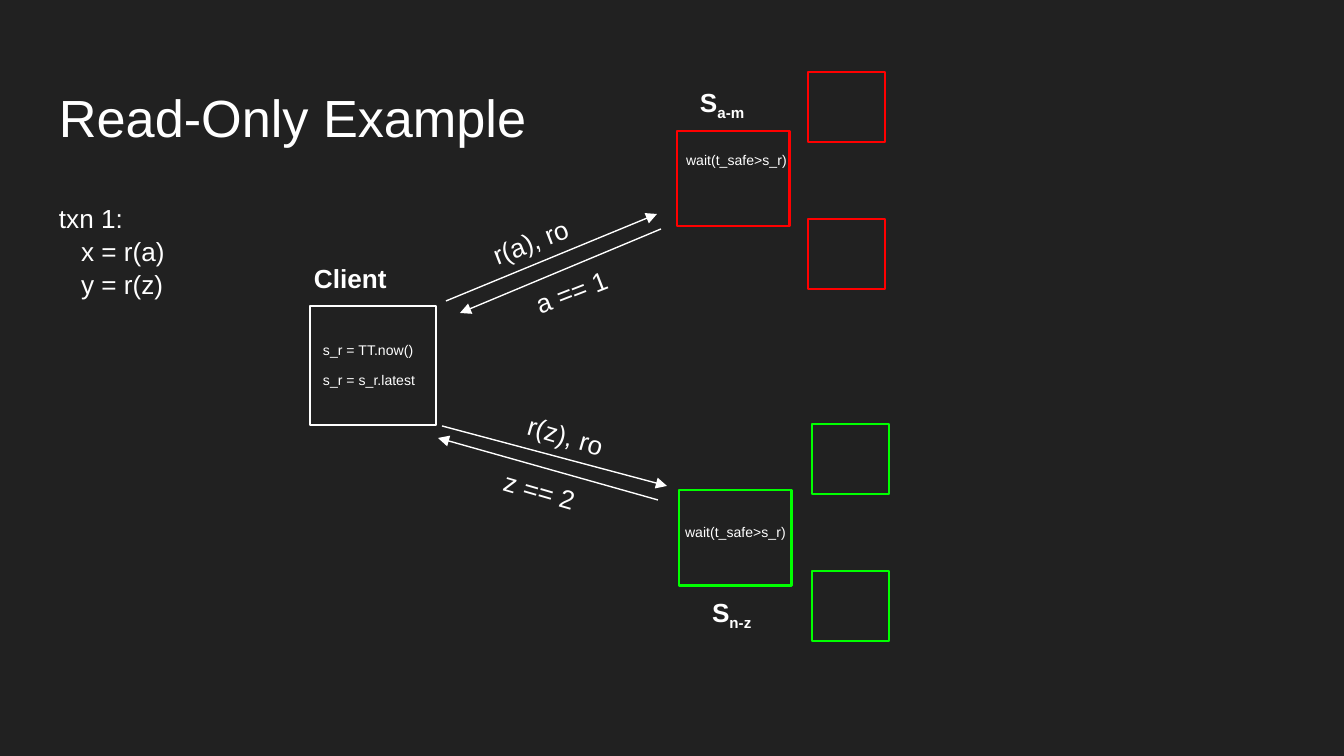
from pptx import Presentation
from pptx.dml.color import RGBColor
from pptx.enum.shapes import MSO_CONNECTOR as Connector, MSO_SHAPE as Shape
from pptx.enum.text import MSO_ANCHOR as Anchor, PP_ALIGN as Align
from pptx.oxml.ns import qn
from pptx.util import Pt
from lxml.etree import SubElement

PX = 914400 / 134.4
INSET = 13
COLOURS = {"background": "212121", "white": "FFFFFF", "red": "FF0000", "green": "00FF00"}

TITLE = ("Read-Only Example", (46, 66, 575, 84))
TRANSACTION = (["txn 1:", "x = r(a)", "y = r(z)"], (46, 188, 164, 227))
CODE_INDENT = 22

SERVERS = [
    ("white", (310, 306, 126, 119)),
    ("red", (677, 131, 113, 95)),
    ("green", (679, 490, 113, 96)),
]
REPLICA_SIZE = (77, 70)
REPLICA_GAP = 147
REPLICA_PAIRS = [("red", 808, 72), ("green", 812, 424)]

HEADINGS = [
    ("Client", "", (301, 249, 113, 46)),
    ("S", "a-m", (687, 73, 97, 46)),
    ("S", "n-z", (699, 583, 97, 46)),
]
MESSAGES = [
    ("r(a), ro", (473, 207, 140, 36), 338.7, (446, 301), (657, 214)),
    ("a == 1", (517, 262, 109, 36), 338.7, (661, 229), (460, 313)),
    ("r(z), ro", (517, 409, 117, 36), 16.3, (442, 426), (667, 486)),
    ("z == 2", (493, 464, 109, 36), 16.2, (658, 500), (438, 438)),
]
STEPS = [
    (["s_r = TT.now()", "s_r = s_r.latest"], (310, 324, 441, 86), INSET),
    (["wait(t_safe>s_r)"], (673, 118, 255, 109), 41),
    (["wait(t_safe>s_r)"], (672, 490, 255, 120), 41),
]


def px(*lengths):
    return [round(length * PX) for length in lengths]


def rgb(name):
    return RGBColor.from_string(COLOURS[name])


def style(run, size, bold=False, baseline=0):
    run.font.name = "Arial"
    run.font.size = Pt(size)
    run.font.bold = bold
    run.font.color.rgb = rgb("white")
    if baseline:
        run.font._element.set("baseline", str(baseline * 1000))


def write(holder, lines, size, top=INSET, spacing=1.0, **look):
    frame = holder.text_frame
    frame.word_wrap = True
    frame.vertical_anchor = Anchor.TOP
    frame.margin_left, frame.margin_right, frame.margin_top, frame.margin_bottom = px(
        INSET, INSET, top, INSET)
    frame.text = "\n".join(lines)
    for paragraph in frame.paragraphs:
        paragraph.alignment = Align.LEFT
        paragraph.line_spacing = spacing
        for run in paragraph.runs:
            style(run, size, **look)
    return frame


def add_text(slide, box, lines, size, **look):
    holder = slide.shapes.add_textbox(*px(*box))
    write(holder, lines, size, **look)
    return holder


def add_box(slide, colour, box):
    square = slide.shapes.add_shape(Shape.RECTANGLE, *px(*box))
    square.shadow.inherit = False
    square.fill.background()
    square.line.color.rgb = rgb(colour)
    square.line.width = Pt(1.5)
    SubElement(square.line._get_or_add_ln(), qn("a:round"))


def add_arrow(slide, start, end):
    arrow = slide.shapes.add_connector(Connector.STRAIGHT, *px(*start, *end))
    arrow.line.color.rgb = rgb("white")
    arrow.line.width = Pt(0.75)
    SubElement(arrow.line._get_or_add_ln(), qn("a:tailEnd"), type="triangle", w="med", len="med")
    SubElement(arrow._element.spPr, qn("a:effectLst"))


def main():
    deck = Presentation()
    deck.slide_width, deck.slide_height = px(1344, 756)
    slide = deck.slides.add_slide(deck.slide_layouts[5])
    slide.background.fill.solid()
    slide.background.fill.fore_color.rgb = rgb("background")

    words, box = TITLE
    title = slide.shapes.title
    title.left, title.top, title.width, title.height = px(*box)
    write(title, [words], 28, top=19)

    lines, box = TRANSACTION
    transaction = add_text(slide, box, lines, 14, spacing=1.05)
    for statement in transaction.text_frame.paragraphs[1:]:
        statement._p.get_or_add_pPr().set("marL", str(px(CODE_INDENT)[0]))

    for colour, box in SERVERS:
        add_box(slide, colour, box)
    for colour, left, top in REPLICA_PAIRS:
        for row in range(2):
            add_box(slide, colour, (left, top + row * REPLICA_GAP, *REPLICA_SIZE))

    for name, key_range, box in HEADINGS:
        heading = add_text(slide, box, [name], 14, bold=True)
        if key_range:
            subscript = heading.text_frame.paragraphs[0].add_run()
            subscript.text = key_range
            style(subscript, 14, bold=True, baseline=-25)

    for words, box, angle, start, end in MESSAGES:
        add_arrow(slide, start, end)
        add_text(slide, box, [words], 14).rotation = angle

    for lines, box, top in STEPS:
        add_text(slide, box, lines, 13, top=top, spacing=1.05, baseline=30)

    deck.save("out.pptx")


if __name__ == "__main__":
    main()
